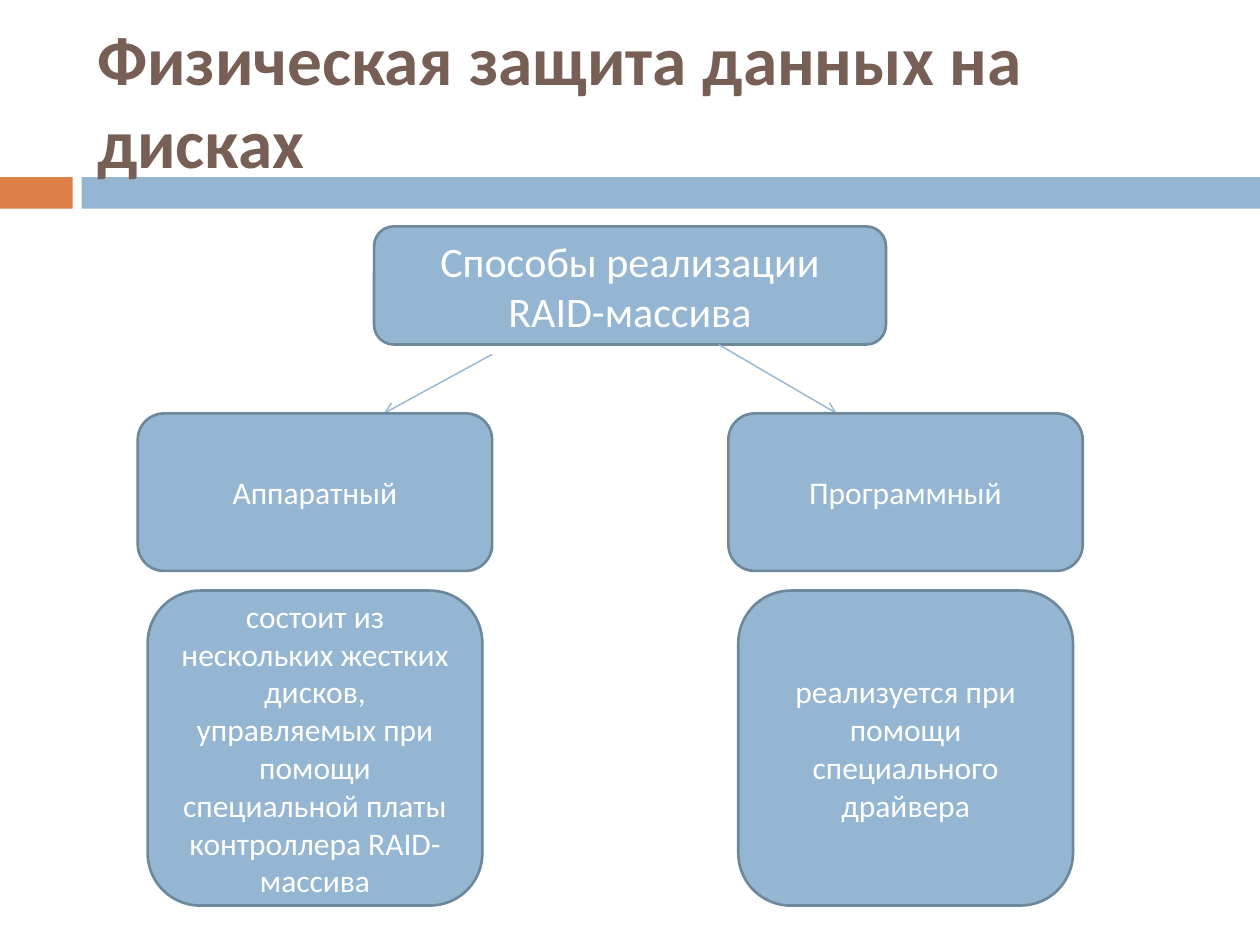
from dataclasses import dataclass

from pptx import Presentation
from pptx.dml.color import RGBColor
from pptx.enum.shapes import MSO_CONNECTOR, MSO_SHAPE
from pptx.enum.text import MSO_ANCHOR, PP_ALIGN
from pptx.oxml.ns import qn
from pptx.util import Inches, Pt
from lxml import etree

RECTANGLE = MSO_SHAPE.RECTANGLE
ROUNDED = MSO_SHAPE.ROUNDED_RECTANGLE
STRAIGHT = MSO_CONNECTOR.STRAIGHT
MIDDLE = MSO_ANCHOR.MIDDLE
LEFT, CENTER = PP_ALIGN.LEFT, PP_ALIGN.CENTER

SLIDE_WIDTH, SLIDE_HEIGHT = Inches(10), Inches(7.5)
GRID_COLUMNS, GRID_ROWS = 64, 48

BRANCHES = [
    (
        "Аппаратный",
        "состоит из нескольких жестких дисков, управляемых при помощи "
        "специальной платы контроллера RAID-массива",
    ),
    ("Программный", "реализуется при помощи специального драйвера"),
]
FIRST_BRANCH, BRANCH_STEP = 7, 30
BRANCH_TOP = 21
ARROWS = [((25, 18), (19.5, BRANCH_TOP)), ((36.5, 17.5), (42.5, BRANCH_TOP))]


@dataclass(frozen=True)
class Theme:
    font: str = "Calibri"
    blue: RGBColor = RGBColor(0x94, 0xB6, 0xD2)
    outline: RGBColor = RGBColor(0x6D, 0x87, 0x9B)
    orange: RGBColor = RGBColor(0xDD, 0x80, 0x47)
    brown: RGBColor = RGBColor(0x77, 0x5F, 0x55)
    white: RGBColor = RGBColor(0xFF, 0xFF, 0xFF)
    title_size: float = 39.6
    root_size: float = 24
    branch_size: float = 18
    outline_width: float = 1.5
    arrow_width: float = 0.79


THEME = Theme()


def grid_point(column, row):
    return (
        round(column * SLIDE_WIDTH / GRID_COLUMNS),
        round(row * SLIDE_HEIGHT / GRID_ROWS),
    )


def grid_box(column, row, columns, rows):
    return *grid_point(column, row), *grid_point(columns, rows)


def write_text(shape, text, size, color, alignment, bold=False):
    text_frame = shape.text_frame
    text_frame.word_wrap = True
    text_frame.vertical_anchor = MIDDLE
    text_frame.text = text
    paragraph = text_frame.paragraphs[0]
    paragraph.alignment = alignment
    font = paragraph.runs[0].font
    font.name, font.size, font.bold = THEME.font, Pt(size), bold
    font.color.rgb = color


def add_filled_shape(slide, preset, box, fill):
    shape = slide.shapes.add_shape(preset, *grid_box(*box))
    shape.shadow.inherit = False
    shape.fill.solid()
    shape.fill.fore_color.rgb = fill
    shape.line.fill.background()
    return shape


def add_node(slide, box, text, size):
    node = add_filled_shape(slide, ROUNDED, box, THEME.blue)
    node.line.color.rgb = THEME.outline
    node.line.width = Pt(THEME.outline_width)
    write_text(node, text, size, THEME.white, CENTER)


def add_arrow(slide, start, end):
    arrow = slide.shapes.add_connector(
        STRAIGHT, *grid_point(*start), *grid_point(*end)
    )
    arrow.line.color.rgb = THEME.blue
    arrow.line.width = Pt(THEME.arrow_width)
    properties = arrow._element.spPr
    etree.SubElement(properties.find(qn("a:ln")), qn("a:tailEnd"), type="arrow")
    etree.SubElement(properties, qn("a:effectLst"))


def add_heading(slide, text):
    """Draw the two-colour band and the slide title above it."""
    add_filled_shape(slide, RECTANGLE, (0, 9, 3.7, 1.6), THEME.orange)
    add_filled_shape(slide, RECTANGLE, (4.15, 9, 59.85, 1.6), THEME.blue)
    title = slide.shapes.add_textbox(*grid_box(4.3, 1.6, 57.1, 6.9))
    write_text(title, text, THEME.title_size, THEME.brown, LEFT, bold=True)


def add_branch(slide, column, name, description):
    add_node(slide, (column, BRANCH_TOP, 18, 8), name, THEME.branch_size)
    add_node(slide, (column + 0.5, 30, 17, 16), description, THEME.branch_size)


def main():
    presentation = Presentation()
    presentation.slide_width = SLIDE_WIDTH
    presentation.slide_height = SLIDE_HEIGHT
    slide = presentation.slides.add_slide(presentation.slide_layouts[6])

    add_heading(slide, "Физическая защита данных на дисках")
    add_node(
        slide, (19, 11.5, 26, 6), "Способы реализации RAID-массива", THEME.root_size
    )
    for start, end in ARROWS:
        add_arrow(slide, start, end)
    for index, (name, description) in enumerate(BRANCHES):
        add_branch(slide, FIRST_BRANCH + index * BRANCH_STEP, name, description)

    presentation.save("out.pptx")


if __name__ == "__main__":
    main()
